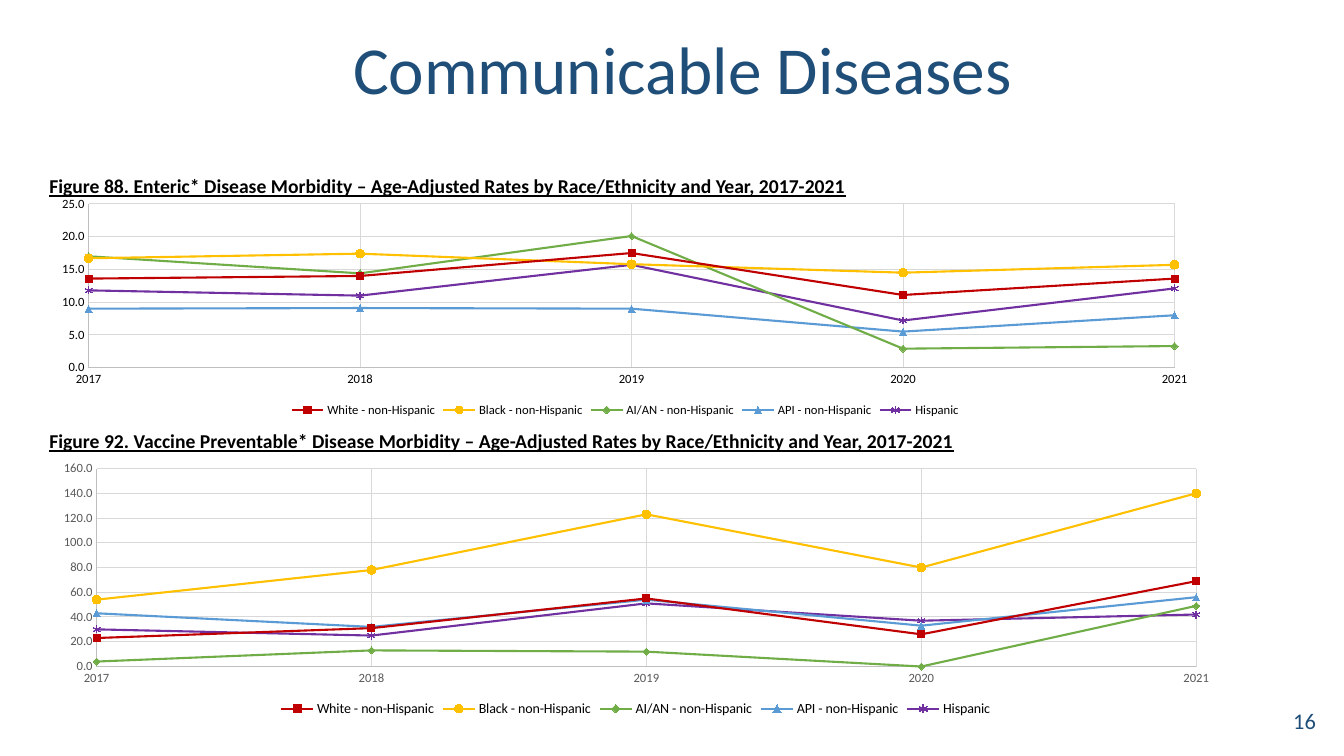
from dataclasses import dataclass

from lxml import etree
from pptx import Presentation
from pptx import util as u
from pptx.chart import data as chart_data
from pptx.dml.color import RGBColor
from pptx.enum import chart as ch
from pptx.enum import text as t

NAVY = RGBColor(0x1F, 0x4E, 0x79)
BLACK = RGBColor(0, 0, 0)
GRAY = RGBColor(0x59, 0x59, 0x59)
AXIS_GRAY = RGBColor(0xBF, 0xBF, 0xBF)
GRID_GRAY = RGBColor(0xD9, 0xD9, 0xD9)
RED = RGBColor(0xC0, 0, 0)
GOLD = RGBColor(0xFF, 0xC0, 0)
GREEN = RGBColor(0x70, 0xAD, 0x47)
BLUE = RGBColor(0x5B, 0x9B, 0xD5)
PURPLE = RGBColor(0x70, 0x30, 0xA0)
FONT = "Calibri"
YEARS = range(2021, 2016, -1)
MARKER = ch.XL_MARKER_STYLE


@dataclass
class Group:
    name: str
    color: RGBColor
    marker: MARKER
    size: int = 5


@dataclass
class Figure:
    heading: str
    heading_box: tuple[float, float, float, float]
    chart_box: tuple[float, float, float, float]
    plot_area: tuple[float, float, float, float]
    rates: list[list[float]]
    maximum: float
    step: float
    axis_color: RGBColor
    legend_size: int


GROUPS = [
    Group("White - non-Hispanic", RED, MARKER.SQUARE),
    Group("Black - non-Hispanic", GOLD, MARKER.CIRCLE, 6),
    Group("AI/AN - non-Hispanic", GREEN, MARKER.DIAMOND),
    Group("API - non-Hispanic", BLUE, MARKER.TRIANGLE),
    Group("Hispanic", PURPLE, MARKER.STAR),
]

FIGURES = [
    Figure(
        "Figure 88. Enteric* Disease Morbidity – Age-Adjusted Rates by Race/Ethnicity and Year, 2017-2021",
        (0.39, 1.66, 8.69, 0.34), (0.39, 1.91, 11.62, 2.27), (0.042, 0.05, 0.927, 0.716),
        [
            [13.6, 11.1, 17.5, 14, 13.6],
            [15.7, 14.5, 15.8, 17.4, 16.7],
            [3.3, 2.9, 20.1, 14.4, 17],
            [8, 5.5, 9, 9.1, 9],
            [12.1, 7.2, 15.7, 11, 11.8],
        ],
        25, 5, BLACK, 9,
    ),
    Figure(
        "Figure 92. Vaccine Preventable* Disease Morbidity – Age-Adjusted Rates by Race/Ethnicity and Year, 2017-2021",
        (0.39, 4.19, 11.62, 0.34), (0.39, 4.52, 11.83, 2.63), (0.048, 0.049, 0.922, 0.747),
        [
            [69, 26, 55, 31, 23],
            [140, 80, 123, 78, 54],
            [49, 0, 12, 13, 4],
            [56, 33, 54, 32, 43],
            [42, 37, 51, 25, 30],
        ],
        160, 20, GRAY, 10,
    ),
]


def set_font(font, size: float, color: RGBColor, bold: bool = False, underline: bool = False) -> None:
    font.name = FONT
    font.size = u.Pt(size)
    font.bold = bold
    font.underline = underline
    font.color.rgb = color


def write_text(shape, words: str, *, size: float, color: RGBColor, align=t.PP_ALIGN.LEFT,
               anchor=t.MSO_ANCHOR.TOP, spacing: float = 1.0,
               bold: bool = False, underline: bool = False) -> None:
    frame = shape.text_frame
    frame.word_wrap = True
    frame.auto_size = t.MSO_AUTO_SIZE.NONE
    frame.vertical_anchor = anchor
    paragraph = frame.paragraphs[0]
    paragraph.alignment = align
    paragraph.line_spacing = spacing
    run = paragraph.add_run()
    run.text = words
    set_font(run.font, size, color, bold, underline)


def inches(box: tuple[float, float, float, float]) -> list[u.Length]:
    return [u.Inches(length) for length in box]


def format_axis(axis, minimum: float, maximum: float, step: float,
                number_format: str, color: RGBColor) -> None:
    axis.minimum_scale = minimum
    axis.maximum_scale = maximum
    axis.major_unit = step
    axis.major_tick_mark = axis.minor_tick_mark = ch.XL_TICK_MARK.NONE
    axis.has_major_gridlines = True
    for line, line_color in ((axis.format.line, AXIS_GRAY), (axis.major_gridlines.format.line, GRID_GRAY)):
        line.color.rgb = line_color
        line.width = u.Pt(0.75)
    axis.tick_labels.number_format = number_format
    axis.tick_labels.number_format_is_linked = False
    set_font(axis.tick_labels.font, 9, color)


def place_plot(chart, area: tuple[float, float, float, float]) -> None:
    plot_area = chart.element.xpath(".//c:plotArea")[0]
    for layout in plot_area.xpath("./c:layout"):
        plot_area.remove(layout)
    namespace = "{%s}" % plot_area.nsmap["c"]
    layout = etree.Element(namespace + "layout")
    manual = etree.SubElement(layout, namespace + "manualLayout")
    settings = [("layoutTarget", "inner"), ("xMode", "edge"), ("yMode", "edge"), *zip("xywh", area)]
    for tag, value in settings:
        etree.SubElement(manual, namespace + tag).set("val", str(value))
    plot_area.insert(0, layout)


def style_series(series, group: Group) -> None:
    series.format.line.color.rgb = group.color
    series.format.line.width = u.Pt(1.5)
    marker = series.marker
    marker.style = group.marker
    marker.size = group.size
    marker.format.line.color.rgb = group.color
    if group.marker == MARKER.STAR:
        marker.format.fill.background()
    else:
        marker.format.fill.solid()
        marker.format.fill.fore_color.rgb = group.color


def draw_figure(slide, figure: Figure) -> None:
    heading = slide.shapes.add_textbox(*inches(figure.heading_box))
    write_text(heading, figure.heading, size=14, color=BLACK, spacing=1.07, bold=True, underline=True)

    data = chart_data.XyChartData(number_format="0.0")
    for group, rates in zip(GROUPS, figure.rates):
        points = data.add_series(group.name)
        for year, rate in zip(YEARS, rates):
            points.add_data_point(year, rate)
    chart = slide.shapes.add_chart(
        ch.XL_CHART_TYPE.XY_SCATTER_LINES, *inches(figure.chart_box), data
    ).chart
    chart.has_title = False
    set_font(chart.font, 10, BLACK)
    chart.plots[0].vary_by_categories = False
    format_axis(chart.category_axis, min(YEARS), max(YEARS), 1, "0", figure.axis_color)
    format_axis(chart.value_axis, 0, figure.maximum, figure.step, "0.0", figure.axis_color)
    chart.has_legend = True
    chart.legend.position = ch.XL_LEGEND_POSITION.BOTTOM
    chart.legend.include_in_layout = False
    set_font(chart.legend.font, figure.legend_size, BLACK)
    for series, group in zip(chart.plots[0].series, GROUPS):
        style_series(series, group)
    place_plot(chart, figure.plot_area)


def main() -> None:
    presentation = Presentation()
    presentation.slide_width = u.Inches(13.33)
    presentation.slide_height = u.Inches(7.5)
    slide = presentation.slides.add_slide(presentation.slide_layouts[5])

    title = slide.shapes.title
    title.left, title.top, title.width, title.height = inches((0.39, 0, 12.76, 1.45))
    write_text(title, "Communicable Diseases", size=48, color=NAVY, align=t.PP_ALIGN.CENTER,
               anchor=t.MSO_ANCHOR.MIDDLE, spacing=0.9)
    number = slide.shapes.add_textbox(*inches((10.15, 6.95, 3, 0.4)))
    write_text(number, "16", size=16, color=NAVY, align=t.PP_ALIGN.RIGHT, anchor=t.MSO_ANCHOR.MIDDLE)
    for figure in FIGURES:
        draw_figure(slide, figure)
    presentation.save("out.pptx")


if __name__ == "__main__":
    main()
